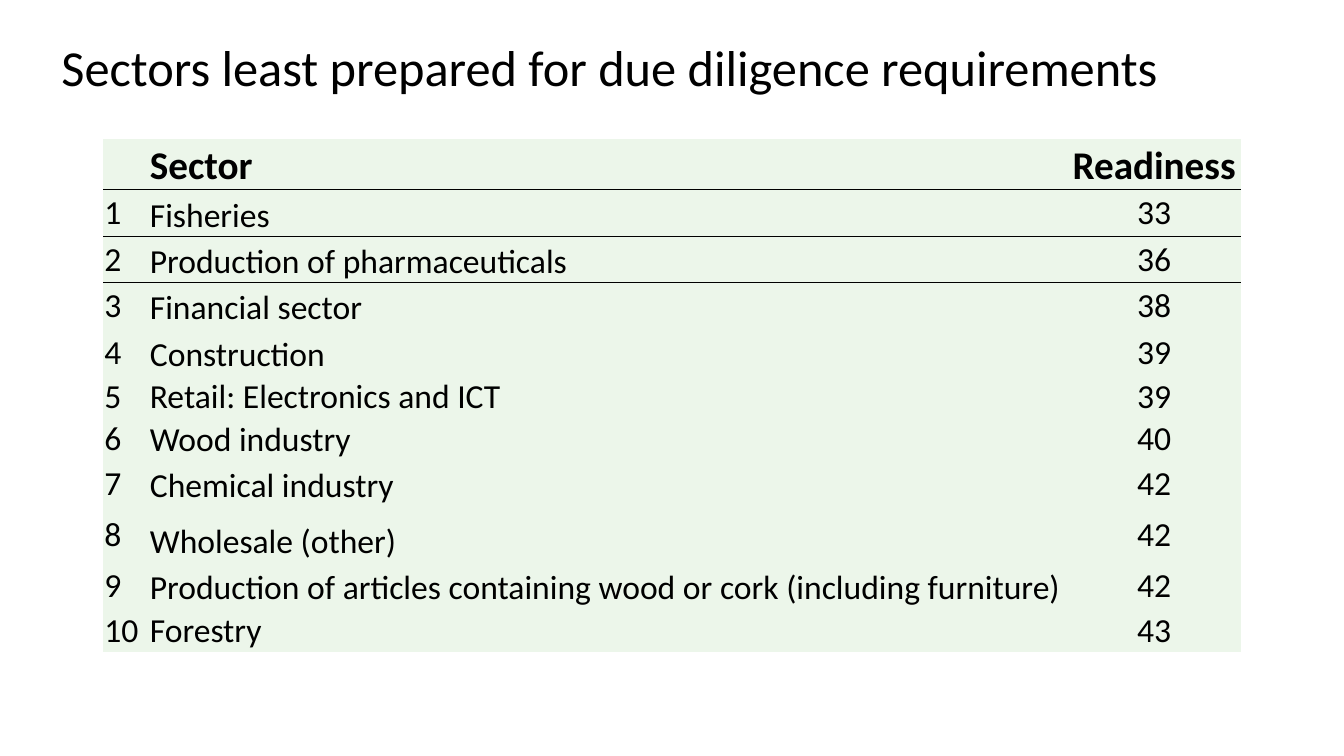
from dataclasses import dataclass

from lxml.etree import SubElement
from pptx import Presentation
from pptx.dml.color import RGBColor
from pptx.enum.text import MSO_ANCHOR, PP_ALIGN
from pptx.oxml.ns import qn
from pptx.util import Cm, Pt


@dataclass(frozen=True)
class Theme:
    font: str = "Calibri"
    ink: str = "000000"
    cell_fill: str = "ECF6EA"
    title_size: int = 36
    header_size: int = 28
    body_size: int = 24
    rule_width: int = 1
    plain_table_style: str = "{2D5ABB26-0587-4C30-8999-92F81FD0307C}"


THEME = Theme()

TITLE = "Sectors least prepared for due diligence requirements"
HEADER = ("", "Sector", "Readiness")
SECTORS = [  # name, readiness, row height in cm
    ("Fisheries", 33, 1.17),
    ("Production of pharmaceuticals", 36, 1.17),
    ("Financial sector", 38, 1.17),
    ("Construction", 39, 1.17),
    ("Retail: Electronics and ICT", 39, 0.97),
    ("Wood industry", 40, 1.09),
    ("Chemical industry", 42, 1.17),
    ("Wholesale (other)", 42, 1.4),
    ("Production of articles containing wood or cork (including furniture)", 42, 1.17),
    ("Forestry", 43, 1.09),
]
HEADER_HEIGHT = 1.27
COLUMN_SHARES = (0.04, 0.807, 0.153)
RULED_ROWS = (0, 1)  # rows with a line beneath


def add_span(para, text, size, bold=False):
    span = para.add_run()
    span.text = text
    span.font.name = THEME.font
    span.font.size = Pt(size)
    span.font.bold = bold
    span.font.color.rgb = RGBColor.from_string(THEME.ink)


def add_title(page, left, top, width, height):
    box = page.shapes.add_textbox(left, top, width, height)
    frame = box.text_frame
    frame.word_wrap = True
    frame.vertical_anchor = MSO_ANCHOR.MIDDLE
    para = frame.paragraphs[0]
    para.line_spacing = 0.9
    add_span(para, TITLE, THEME.title_size)


def add_rule(cell, side):
    """Draw one cell border; side is lnT or lnB."""
    line = SubElement(cell._tc.get_or_add_tcPr(), qn(f"a:{side}"), w=str(Pt(THEME.rule_width)))
    fill = SubElement(line, qn("a:solidFill"))
    SubElement(fill, qn("a:srgbClr"), val=THEME.ink)


def fill_cell(cell, text, row, column):
    header = row == 0
    cell.margin_left = cell.margin_right = cell.margin_top = Cm(0.03)
    cell.margin_bottom = 0
    cell.vertical_anchor = MSO_ANCHOR.BOTTOM if header or column == 1 else MSO_ANCHOR.MIDDLE

    # Borders come before the fill in the cell properties
    if row - 1 in RULED_ROWS:
        add_rule(cell, "lnT")
    if row in RULED_ROWS:
        add_rule(cell, "lnB")
    cell.fill.solid()
    cell.fill.fore_color.rgb = RGBColor.from_string(THEME.cell_fill)

    if text:
        para = cell.text_frame.paragraphs[0]
        para.alignment = PP_ALIGN.CENTER if column == 2 else PP_ALIGN.LEFT
        add_span(para, text, THEME.header_size if header else THEME.body_size, header)


def add_readiness_table(page, left, top, width):
    heights = [HEADER_HEIGHT] + [height for _, _, height in SECTORS]
    records = [HEADER] + [
        (str(rank), name, str(score))
        for rank, (name, score, _) in enumerate(SECTORS, start=1)
    ]
    frame = page.shapes.add_table(
        len(records), len(HEADER), left, top, width, Cm(sum(heights)))
    table = frame.table
    table.first_row = table.horz_banding = False
    table._tbl.tblPr.find(qn("a:tableStyleId")).text = THEME.plain_table_style

    for column, share in zip(table.columns, COLUMN_SHARES):
        column.width = int(width * share)
    for row, (record, height) in enumerate(zip(records, heights)):
        table.rows[row].height = Cm(height)
        for column, text in enumerate(record):
            fill_cell(table.cell(row, column), text, row, column)


def main():
    deck = Presentation()
    deck.slide_width, deck.slide_height = Cm(33.87), Cm(19.05)
    page = deck.slides.add_slide(deck.slide_layouts[6])
    add_title(page, Cm(1.3), Cm(0.51), Cm(29.21), Cm(2.54))
    add_readiness_table(page, Cm(2.6), Cm(3.51), Cm(28.68))
    deck.save("out.pptx")


if __name__ == "__main__":
    main()
